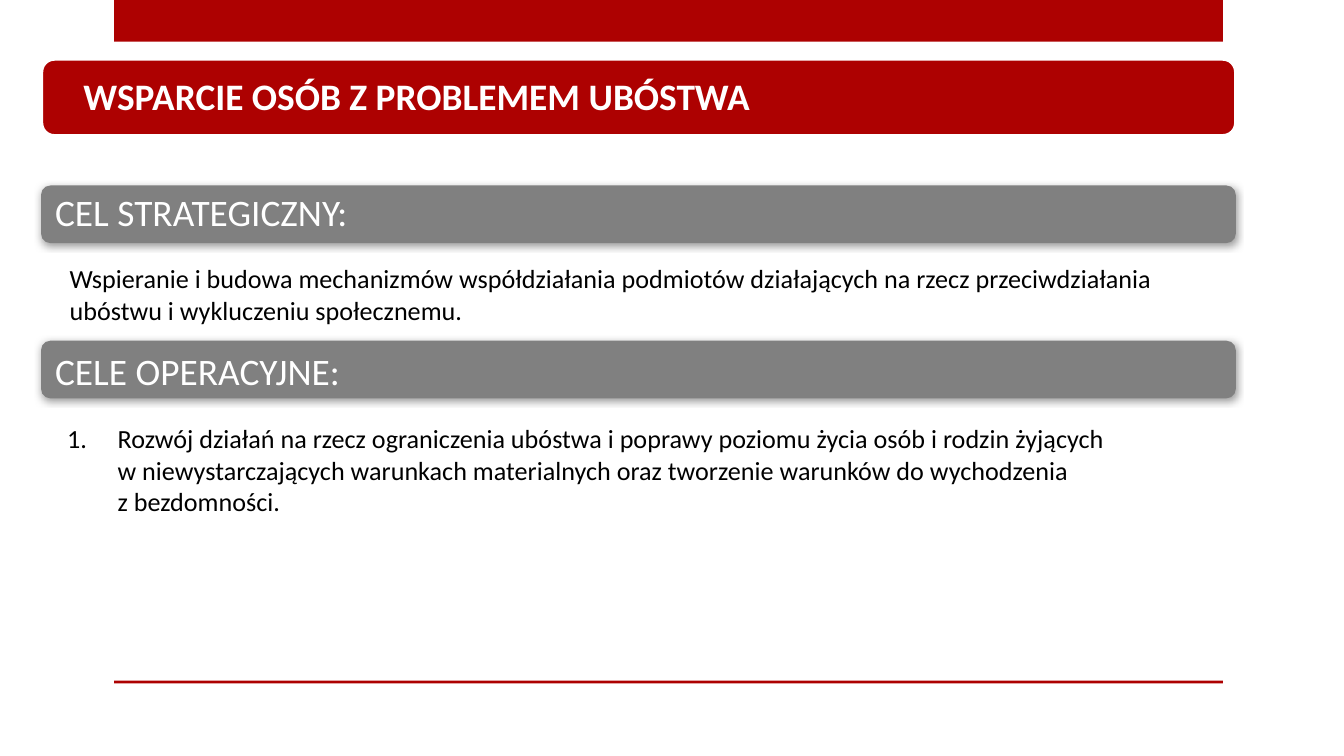
from dataclasses import dataclass

from lxml.etree import SubElement
from pptx import Presentation
from pptx.dml.color import RGBColor
from pptx.enum.shapes import MSO_SHAPE
from pptx.enum.text import MSO_ANCHOR, MSO_AUTO_SIZE, PP_ALIGN
from pptx.oxml.ns import qn
from pptx.util import Pt

PX = 4572  # 200 px to the inch


@dataclass(frozen=True)
class Theme:
    red: str = "AD0101"
    gray: str = "808080"
    white: str = "FFFFFF"
    black: str = "000000"
    font: str = "Calibri"
    heading: int = 20
    body: int = 14


THEME = Theme()
HEADING = {"size": Pt(THEME.heading), "name": THEME.font}
BODY = {"size": Pt(THEME.body), "name": THEME.font}


def emu(*lengths):
    return [length * PX for length in lengths]


def place(shape, box):
    for name, value in zip(("left", "top", "width", "height"), emu(*box)):
        setattr(shape, name, value)


def add_block(shapes, kind, box, color):
    block = shapes.add_shape(kind, *emu(*box))
    block.shadow.inherit = False
    block.fill.solid()
    block.fill.fore_color.rgb = RGBColor.from_string(color)
    block.line.fill.background()
    return block


def write(shape, text, font, color, anchor=MSO_ANCHOR.TOP, wrap=True, inset=(20, 10)):
    """Fill a shape with one left-aligned paragraph and return it."""
    frame = shape.text_frame
    across, down = emu(*inset)
    settings = {
        "auto_size": MSO_AUTO_SIZE.NONE, "word_wrap": wrap, "vertical_anchor": anchor,
        "margin_left": across, "margin_right": across,
        "margin_top": down, "margin_bottom": down,
    }
    for name, value in settings.items():
        setattr(frame, name, value)
    para = frame.paragraphs[0]
    para.text = text
    para.alignment = PP_ALIGN.LEFT
    para.space_before = Pt(0)
    for span in para.runs:
        for name, value in font.items():
            setattr(span.font, name, value)
        span.font.color.rgb = RGBColor.from_string(color)
    for line_break in shape.element.iter(qn("a:br")):
        SubElement(line_break, qn("a:rPr"), sz=str(int(font["size"].pt * 100)))
    return para


def add_soft_shadow(shape):
    effects = shape.element.spPr.find(qn("a:effectLst"))
    shadow = SubElement(effects, qn("a:outerShdw"), blurRad=str(Pt(4)), dist=str(Pt(1)),
                        dir=str(88 * 60000), rotWithShape="0")
    color = SubElement(shadow, qn("a:srgbClr"), val=THEME.black)
    SubElement(color, qn("a:alpha"), val="40000")


def number_paragraph(shape, indent):
    properties = shape.element.find(".//" + qn("a:pPr"))
    properties.set("marL", str(indent * PX))
    properties.set("indent", str(-indent * PX))
    color = SubElement(properties, qn("a:buClr"))
    SubElement(color, qn("a:srgbClr"), val=THEME.black)
    SubElement(properties, qn("a:buFont"), typeface=THEME.font)
    SubElement(properties, qn("a:buAutoNum"), type="arabicPeriod")


def add_frame(page, box):
    """Red band at the top of the box and thin rule at its bottom."""
    left, top, width, height = box
    for offset, thickness in ((0, 62), (height - 4, 4)):
        add_block(page.shapes, MSO_SHAPE.RECTANGLE,
                  (left, top + offset, width, thickness), THEME.red)


def add_title_banner(page, box, text):
    left, top, width, height = box
    banner = add_block(page.shapes, MSO_SHAPE.ROUNDED_RECTANGLE, box, THEME.red)
    banner.line.color.rgb = RGBColor.from_string(THEME.white)
    banner.line.width = Pt(1.75)
    title = page.shapes.title
    place(title, (left + 42, top + 11, 1050, height - 26))
    write(title, text, HEADING | {"bold": True}, THEME.white, wrap=False)
    page.shapes.element.append(title.element)  # bring in front of the banner


def add_section_banner(page, box, text, text_drop):
    left, top, width, height = box
    group = page.shapes.add_group_shape()
    banner = add_block(group.shapes, MSO_SHAPE.ROUNDED_RECTANGLE, box, THEME.gray)
    add_soft_shadow(banner)
    label = group.shapes.add_textbox(*emu(left + 5, top + text_drop, width - 10, height - 8))
    para = write(label, text, HEADING, THEME.white, MSO_ANCHOR.MIDDLE, inset=(16, 16))
    para.line_spacing = 0.9
    para.space_after = Pt(7)


def add_strategic_goal(page, box, text):
    goal = page.shapes.add_textbox(*emu(*box))
    write(goal, text, BODY, THEME.black)


def add_operational_goals(page, box, text):
    goals = page.placeholders[1]
    place(goals, box)
    write(goals, text, BODY, THEME.black)
    number_paragraph(goals, 75)
    page.shapes.element.append(goals.element)  # keep the reading order


def main():
    deck = Presentation()
    deck.slide_width, deck.slide_height = emu(2000, 1125)
    page = deck.slides.add_slide(deck.slide_layouts[1])

    add_frame(page, (170, 0, 1650, 1017))
    add_section_banner(page, (61, 276, 1778, 86), "CEL STRATEGICZNY:", 4)
    add_strategic_goal(
        page, (84, 381, 1714, 114),
        "Wspieranie i budowa mechanizmów współdziałania podmiotów działających "
        "na rzecz przeciwdziałania ubóstwu i wykluczeniu społecznemu.")
    add_section_banner(page, (61, 507, 1778, 86), "CELE OPERACYJNE:", 9)
    add_operational_goals(
        page, (80, 619, 1760, 162),
        "Rozwój działań na rzecz ograniczenia ubóstwa i poprawy poziomu życia osób i rodzin żyjących \v"
        "w niewystarczających warunkach materialnych oraz tworzenie warunków do wychodzenia \v"
        "z bezdomności.")
    add_title_banner(page, (62, 88, 1777, 114), "WSPARCIE OSÓB Z PROBLEMEM UBÓSTWA")

    deck.save("out.pptx")


if __name__ == "__main__":
    main()
